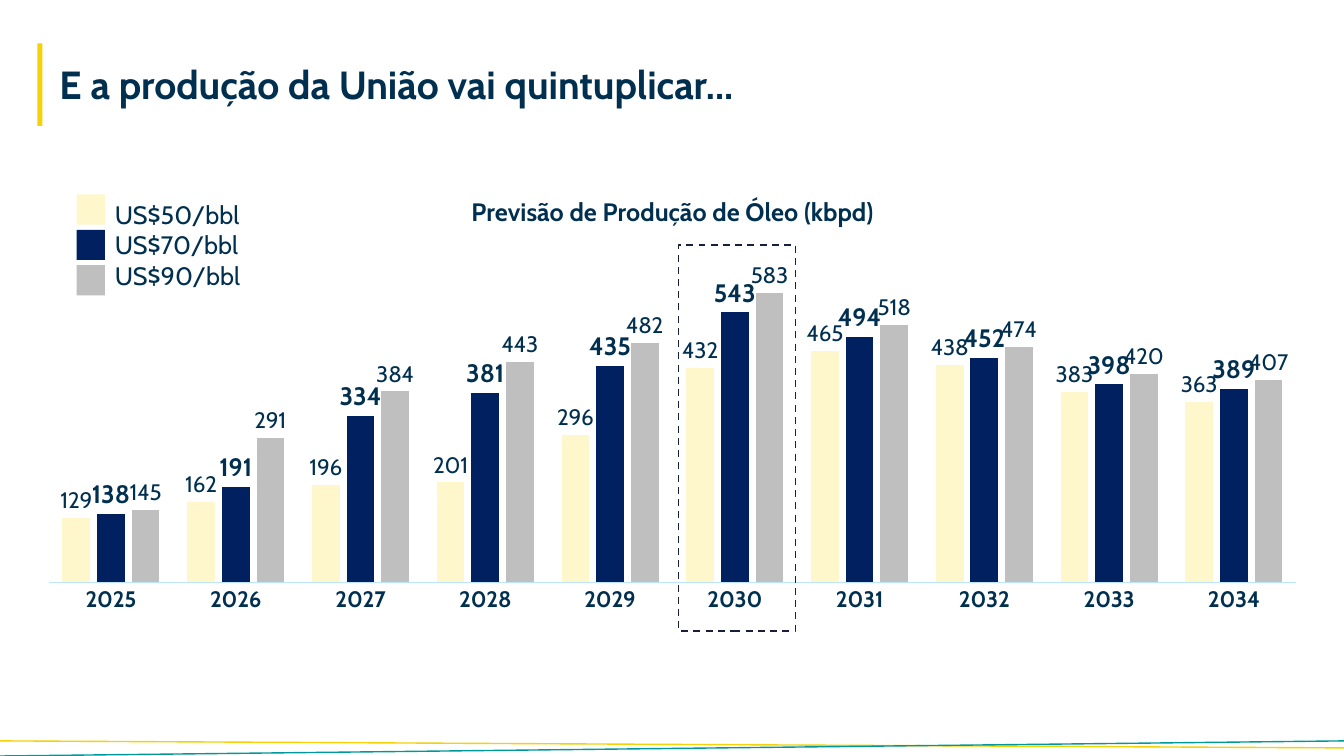
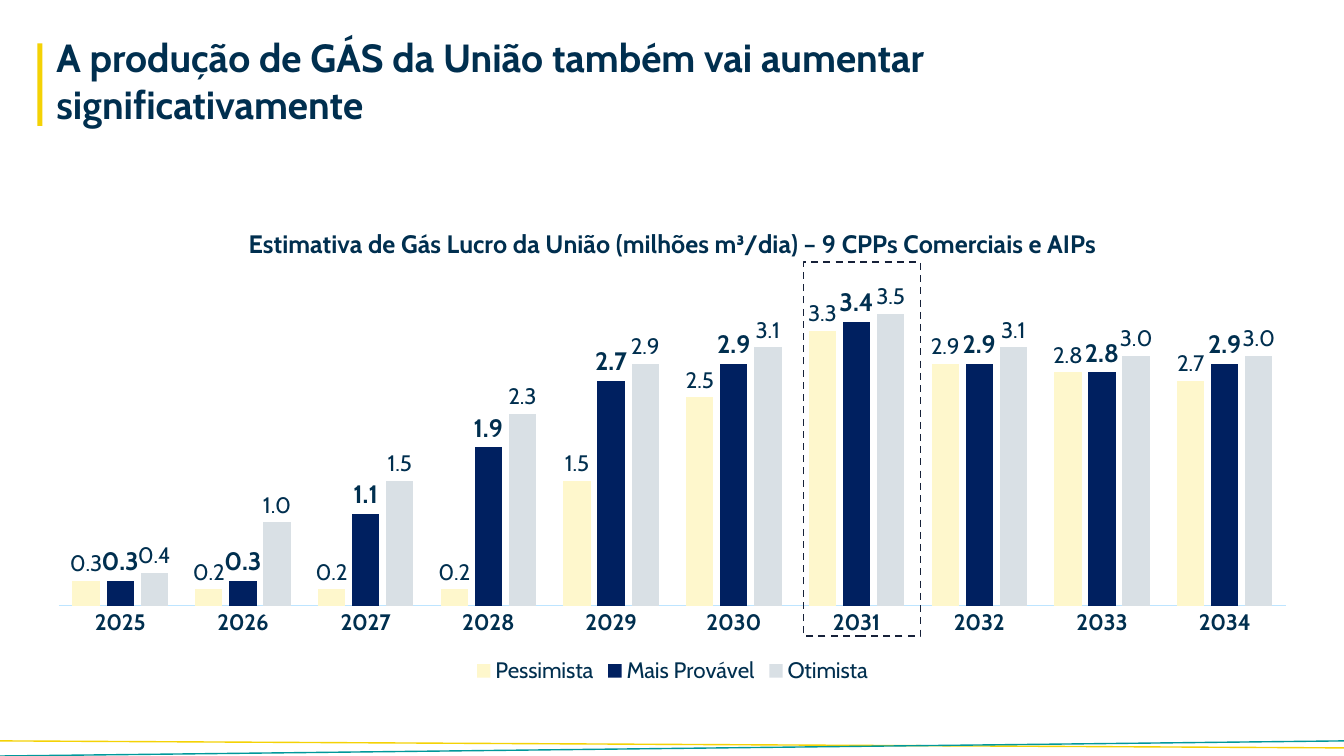
from dataclasses import dataclass

import lxml.etree
import pptx
import pptx.chart.chart
import pptx.chart.data
import pptx.dml.color
import pptx.enum.chart
import pptx.enum.dml
import pptx.enum.shapes
import pptx.enum.text
import pptx.oxml
import pptx.oxml.ns
import pptx.shapes.autoshape
import pptx.slide
import pptx.text.text
import pptx.util

Inches = pptx.util.Inches
Pt = pptx.util.Pt
RGBColor = pptx.dml.color.RGBColor

INK = RGBColor(0x00, 0x2F, 0x4F)
GOLD = RGBColor(0xF4, 0xD2, 0x05)
TEAL = RGBColor(0x00, 0x98, 0x9A)
CREAM = RGBColor(0xFE, 0xF7, 0xCC)
NAVY = RGBColor(0x00, 0x20, 0x60)
GREY = RGBColor(0xBF, 0xBF, 0xBF)
MIST = RGBColor(0xD9, 0xE0, 0xE5)
SKY = RGBColor(0xBE, 0xE5, 0xFF)
DARK = RGBColor(0x16, 0x21, 0x39)
FONT = "Cabin"
YEARS = [str(year) for year in range(2025, 2035)]


@dataclass
class Box:
    left: float
    top: float
    width: float
    height: float

    def sides(self) -> tuple[int, ...]:
        return tuple(Inches(side) for side in
                     (self.left, self.top, self.width, self.height))


@dataclass
class Series:
    name: str
    color: RGBColor
    values: list[float]
    main: bool = False


@dataclass
class Page:
    title: str
    title_box: Box
    heading: str
    box: Box
    plot: Box  # fractions of the chart's size
    top: float
    digits: str
    focus: Box
    legend: bool
    series: list[Series]


PAGES = [
    Page(
        "E a produção da União vai quintuplicar...",
        Box(0.53, 0.44, 11.6, 0.79),
        "Previsão de Produção de Óleo (kbpd)",
        Box(0.33, 1.73, 12.68, 4.97), Box(0.012, 0.12, 0.976, 0.694),
        700, "#,##0", Box(6.73, 2.43, 1.16, 3.83), False,
        [
            Series("US$50/bbl", CREAM,
                   [129, 162, 196, 201, 296, 432, 465, 438, 383, 363]),
            Series("US$70/bbl", NAVY,
                   [138, 191, 334, 381, 435, 543, 494, 452, 398, 389], True),
            Series("US$90/bbl", GREY,
                   [145, 291, 384, 443, 482, 583, 518, 474, 420, 407]),
        ],
    ),
    Page(
        "A produção de GÁS da União também vai aumentar significativamente",
        Box(0.5, 0.4, 11.59, 0.79),
        "Estimativa de Gás Lucro da União (milhões m³/dia) – "
        "9 CPPs Comerciais e AIPs",
        Box(0.33, 2.05, 12.68, 4.78), Box(0.02, 0.136, 0.96, 0.693),
        4, "#,##0.0", Box(7.97, 2.6, 1.16, 3.71), True,
        [
            Series("Pessimista", CREAM,
                   [0.3, 0.2, 0.2, 0.2, 1.5, 2.5, 3.3, 2.9, 2.8, 2.7]),
            Series("Mais Provável", NAVY,
                   [0.3, 0.3, 1.1, 1.9, 2.7, 2.9, 3.4, 2.9, 2.8, 2.9], True),
            Series("Otimista", MIST,
                   [0.4, 1.0, 1.5, 2.3, 2.9, 3.1, 3.5, 3.1, 3.0, 3.0]),
        ],
    ),
]


def style(font: pptx.text.text.Font, size: float, bold: bool = False) -> None:
    font.name, font.size, font.bold = FONT, Pt(size), bold
    font.color.rgb = INK


def write(frame: pptx.text.text.TextFrame, *lines: str, size: float = 18,
          bold: bool = False,
          align: pptx.enum.text.PP_ALIGN | None = None) -> None:
    for index, line in enumerate(lines):
        para = frame.add_paragraph() if index else frame.paragraphs[0]
        para.alignment = align
        run = para.add_run()
        run.text = line
        style(run.font, size, bold)


def block(slide: pptx.slide.Slide, box: Box,
          fill: RGBColor | None = None) -> pptx.shapes.autoshape.Shape:
    """Draw a rectangle without outline, hollow unless a fill is given."""
    shape = slide.shapes.add_shape(
        pptx.enum.shapes.MSO_SHAPE.RECTANGLE, *box.sides())
    shape.shadow.inherit = False
    shape.line.fill.background()
    if fill is None:
        shape.fill.background()
    else:
        shape.fill.solid()
        shape.fill.fore_color.rgb = fill
    return shape


def footer(slide: pptx.slide.Slide) -> None:
    for right, left, color in ((7.42, 7.35, GOLD), (7.35, 7.5, TEAL)):
        line = slide.shapes.add_connector(
            pptx.enum.shapes.MSO_CONNECTOR.STRAIGHT,
            Inches(13.33), Inches(right), Inches(0), Inches(left))
        line.line.color.rgb = color
        line.line.width = Pt(1)
        lxml.etree.SubElement(line.element.spPr,
                              pptx.oxml.ns.qn("a:effectLst"))


def header(slide: pptx.slide.Slide, page: Page) -> None:
    block(slide, Box(0.37, 0.43, 0.05, 0.82), GOLD)
    title = slide.shapes.title
    title.left, title.top, title.width, title.height = page.title_box.sides()
    frame = title.text_frame
    frame.word_wrap = True
    frame.auto_size = pptx.enum.text.MSO_AUTO_SIZE.NONE
    frame.vertical_anchor = pptx.enum.text.MSO_ANCHOR.MIDDLE
    frame.margin_left = frame.margin_right = Inches(0.06)
    frame.margin_top = frame.margin_bottom = Inches(0.03)
    write(frame, page.title, size=28, bold=True,
          align=pptx.enum.text.PP_ALIGN.LEFT)


def place(chart: pptx.chart.chart.Chart, plot: Box) -> None:
    """Fix the inner plot area at the given fractions of the chart."""
    area = chart.element.find(".//" + pptx.oxml.ns.qn("c:plotArea"))
    for old in area.findall(pptx.oxml.ns.qn("c:layout")):
        area.remove(old)
    area.insert(0, pptx.oxml.parse_xml(
        f'<c:layout {pptx.oxml.ns.nsdecls("c")}><c:manualLayout>'
        '<c:layoutTarget val="inner"/>'
        '<c:xMode val="edge"/><c:yMode val="edge"/>'
        f'<c:x val="{plot.left}"/><c:y val="{plot.top}"/>'
        f'<c:w val="{plot.width}"/><c:h val="{plot.height}"/>'
        '</c:manualLayout></c:layout>'))


def axes(chart: pptx.chart.chart.Chart, page: Page) -> None:
    none = pptx.enum.chart.XL_TICK_MARK.NONE
    years = chart.category_axis
    years.major_tick_mark = years.minor_tick_mark = none
    years.has_major_gridlines = False
    years.format.line.color.rgb = SKY
    years.format.line.width = Pt(0.75)
    style(years.tick_labels.font, 16, True)
    scale = chart.value_axis
    scale.has_major_gridlines = False
    scale.minimum_scale, scale.maximum_scale = 0, page.top
    scale.visible = False


def graph(slide: pptx.slide.Slide, page: Page) -> None:
    data = pptx.chart.data.CategoryChartData(number_format=page.digits)
    data.categories = YEARS
    for item in page.series:
        data.add_series(item.name, item.values)
    chart = slide.shapes.add_chart(
        pptx.enum.chart.XL_CHART_TYPE.COLUMN_CLUSTERED,
        *page.box.sides(), data).chart
    style(chart.font, 10)
    chart.has_title = True
    write(chart.chart_title.text_frame, page.heading, bold=True)
    chart.chart_title.include_in_layout = False
    chart.has_legend = page.legend
    if page.legend:
        chart.legend.position = pptx.enum.chart.XL_LEGEND_POSITION.BOTTOM
        chart.legend.include_in_layout = False
        style(chart.legend.font, 16)
    axes(chart, page)
    place(chart, page.plot)
    plot = chart.plots[0]
    plot.gap_width, plot.overlap = 100, -25
    plot.vary_by_categories = False
    for bars, item in zip(plot.series, page.series):
        bars.invert_if_negative = False
        bars.format.fill.solid()
        bars.format.fill.fore_color.rgb = item.color
        labels = bars.data_labels
        labels.show_value = True
        labels.number_format = page.digits
        labels.number_format_is_linked = False
        labels.position = pptx.enum.chart.XL_LABEL_POSITION.OUTSIDE_END
        style(labels.font, 18 if item.main else 16, item.main)


def outline(slide: pptx.slide.Slide, box: Box) -> None:
    """Mark the peak year with a dashed frame."""
    shape = block(slide, box)
    shape.line.color.rgb = DARK
    shape.line.width = Pt(1.25)
    shape.line.dash_style = pptx.enum.dml.MSO_LINE.DASH


def key(slide: pptx.slide.Slide, series: list[Series]) -> None:
    """List the series by hand, at the top left of the chart."""
    names = slide.shapes.add_textbox(*Box(1.04, 1.93, 3.56, 1.01).sides())
    names.text_frame.word_wrap = True
    write(names.text_frame, *(item.name for item in series))
    for index, item in enumerate(series):
        block(slide, Box(0.76, 1.93 + 0.35 * index, 0.28, 0.3), item.color)


def main() -> None:
    deck = pptx.Presentation()
    deck.slide_width, deck.slide_height = Inches(13.33), Inches(7.5)
    layout = deck.slide_layouts.get_by_name("Title Only")
    for page in PAGES:
        slide = deck.slides.add_slide(layout)
        header(slide, page)
        footer(slide)
        graph(slide, page)
        outline(slide, page.focus)
        if not page.legend:
            key(slide, page.series)
    deck.save("out.pptx")


if __name__ == "__main__":
    main()
